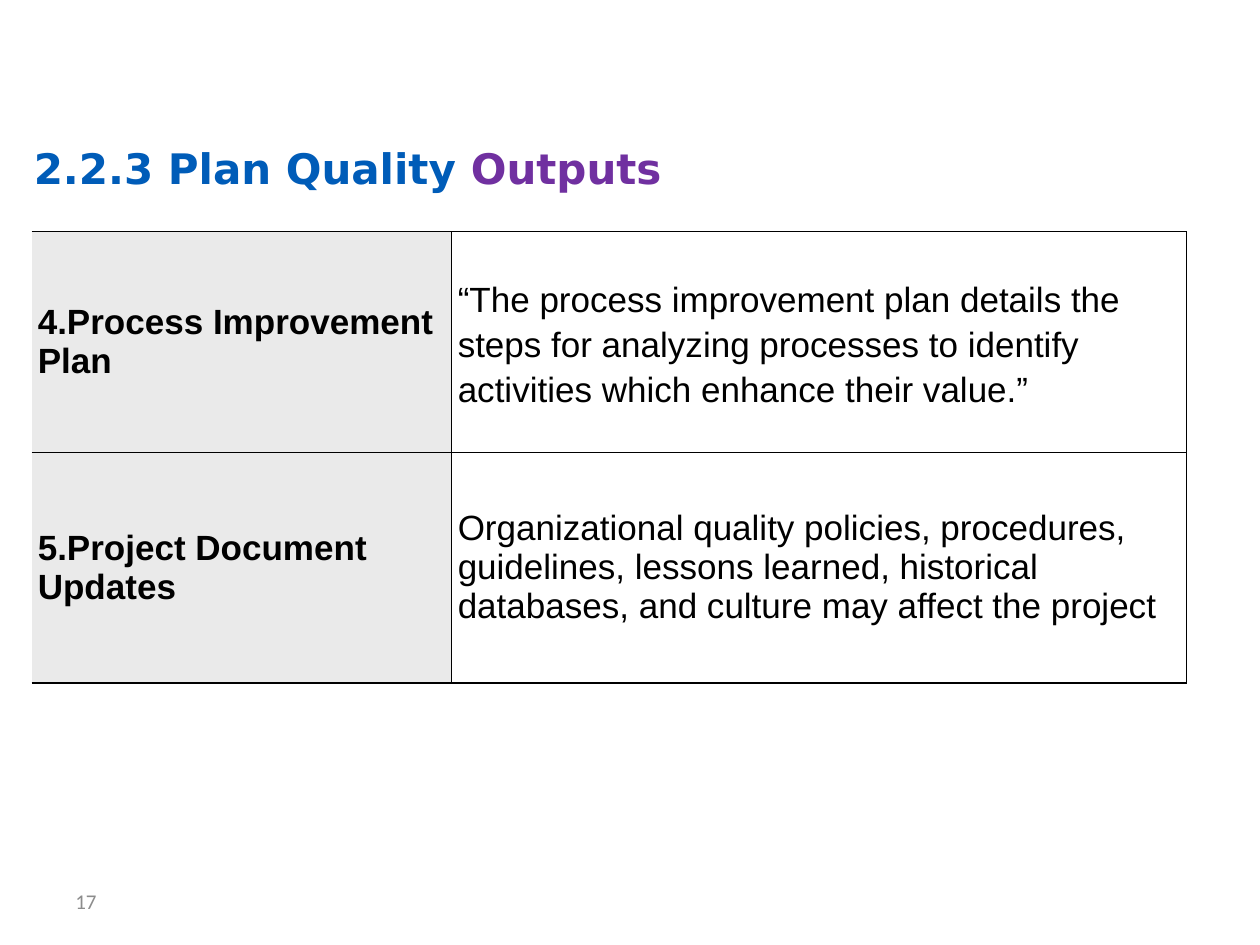
"""Build the Plan Quality outputs slide: a title, a two-row table and a page number."""
from dataclasses import dataclass

from lxml import etree
from pptx import Presentation, util as u
from pptx.dml.color import RGBColor
from pptx.enum import text
from pptx.oxml.ns import qn


@dataclass(frozen=True)
class Theme:
    blue: str = "005CB8"
    purple: str = "7030A0"
    black: str = "000000"
    grey: str = "8C8C8C"
    label_fill: str = "EAEAEA"
    title_font: str = "DejaVu Sans"
    body_font: str = "Arial"
    number_font: str = "Calibri"
    title_size: float = 24
    body_size: float = 20
    number_size: float = 12
    thin: float = 0.5
    rule: float = 1


@dataclass(frozen=True)
class Span:
    words: str
    font: str
    size: float
    color: str
    bold: bool = False


@dataclass(frozen=True)
class Area:
    left: float
    top: float
    width: float
    height: float

    def lengths(self) -> list[int]:
        return [u.Inches(n) for n in (self.left, self.top, self.width, self.height)]


@dataclass(frozen=True)
class Output:
    label: str
    detail: str
    height: float
    spacing: float = 1.0


THEME = Theme()
WIDTH, HEIGHT = 10, 7.5
COLUMNS = (WIDTH / 3, WIDTH * 7 / 12)
OUTPUTS = (
    Output("4.Process Improvement Plan",
           "“The process improvement plan details the steps for analyzing "
           "processes to identify activities which enhance their value.”", 1.75, 1.15),
    Output("5.Project Document Updates",
           "Organizational quality policies, procedures, guidelines, lessons learned, "
           "historical databases, and culture may affect the project", 1.83),
)


def add_span(para, span: Span) -> None:
    run = para.add_run()
    run.text = span.words
    run.font.name = span.font
    run.font.size = u.Pt(span.size)
    run.font.bold = span.bold
    run.font.color.rgb = RGBColor.from_string(span.color)


def add_text(page, area: Area, spans: list[Span], anchor) -> None:
    frame = page.shapes.add_textbox(*area.lengths()).text_frame
    frame.word_wrap = True
    frame.vertical_anchor = anchor
    for span in spans:
        add_span(frame.paragraphs[0], span)


def set_border(cell, side: str, points: float) -> None:
    line = etree.SubElement(cell._tc.get_or_add_tcPr(), qn(f"a:ln{side}"), w=str(u.Pt(points)))
    if points:
        fill = etree.SubElement(line, qn("a:solidFill"))
        etree.SubElement(fill, qn("a:srgbClr"), val=THEME.black)
    else:
        etree.SubElement(line, qn("a:noFill"))


def fill_cell(cell, words: str, spacing: float, is_label: bool, is_first: bool) -> None:
    cell.margin_left = cell.margin_right = u.Inches(0.05)
    cell.margin_top = cell.margin_bottom = u.Inches(0.05)
    cell.vertical_anchor = text.MSO_ANCHOR.MIDDLE
    set_border(cell, "L", 0 if is_label else THEME.rule)
    set_border(cell, "R", THEME.rule if is_label else THEME.thin)
    set_border(cell, "T", THEME.thin if is_first else THEME.rule)
    set_border(cell, "B", THEME.rule)
    if is_label:
        cell.fill.solid()
        cell.fill.fore_color.rgb = RGBColor.from_string(THEME.label_fill)
    else:
        cell.fill.background()
    para = cell.text_frame.paragraphs[0]
    para.space_before = u.Pt(THEME.body_size / 4)
    para.line_spacing = spacing
    add_span(para, Span(words, THEME.body_font, THEME.body_size, THEME.black, is_label))


def add_outputs(page, left: float, top: float) -> None:
    area = Area(left, top, sum(COLUMNS), sum(output.height for output in OUTPUTS))
    table = page.shapes.add_table(len(OUTPUTS), len(COLUMNS), *area.lengths()).table
    table.first_row = table.horz_banding = False
    for column, width in zip(table.columns, COLUMNS):
        column.width = u.Inches(width)
    for index, output in enumerate(OUTPUTS):
        table.rows[index].height = u.Inches(output.height)
        fill_cell(table.cell(index, 0), output.label, 1.0, True, index == 0)
        fill_cell(table.cell(index, 1), output.detail, output.spacing, False, index == 0)


def main() -> None:
    deck = Presentation()
    deck.slide_width, deck.slide_height = u.Inches(WIDTH), u.Inches(HEIGHT)
    page = deck.slides.add_slide(deck.slide_layouts[6])
    add_text(page, Area(0.5, 6.95, 2.33, 0.4),
             [Span("17", THEME.number_font, THEME.number_size, THEME.grey)],
             text.MSO_ANCHOR.MIDDLE)
    add_outputs(page, WIDTH / 40, 1.84)
    add_text(page, Area(0.17, 1.08, 9.5, 0.5),
             [Span(words, THEME.title_font, THEME.title_size, color, True)
              for words, color in (("2.2.3 Plan Quality ", THEME.blue), ("Outputs", THEME.purple))],
             text.MSO_ANCHOR.TOP)
    deck.save("out.pptx")


if __name__ == "__main__":
    main()
